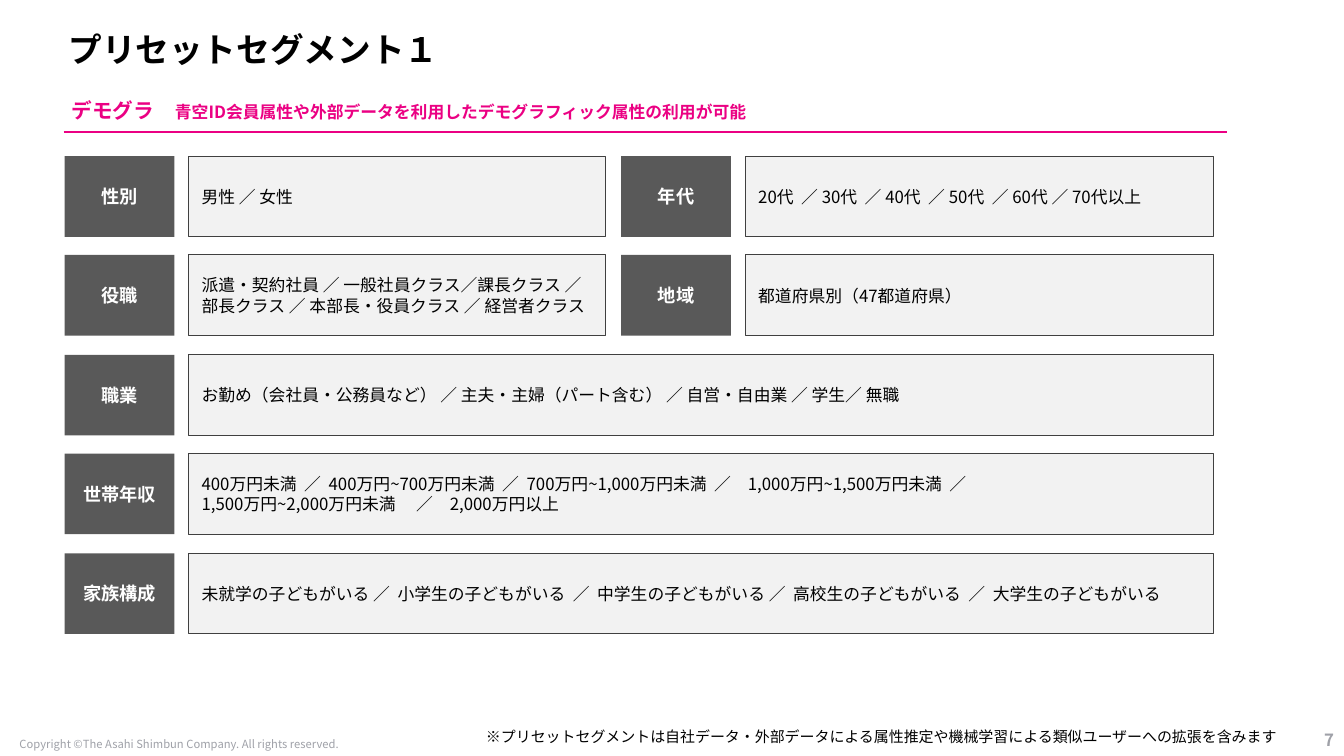
from lxml import etree
from pptx import Presentation
from pptx.dml.color import RGBColor
from pptx.enum.shapes import MSO_CONNECTOR, MSO_SHAPE
from pptx.enum.text import MSO_ANCHOR, MSO_AUTO_SIZE, PP_ALIGN
from pptx.oxml.ns import qn
from pptx.util import Pt

PX = 9144  # 100 px to the inch
FONT = "Noto Sans CJK JP"
PINK, DARK, PALE, EDGE = "EB0083", "595959", "F2F2F2", "404040"
BLACK, WHITE, GREY = "000000", "FFFFFF", "9FA1A8"
RECT, LINE = MSO_SHAPE.RECTANGLE, MSO_CONNECTOR.STRAIGHT
LEFT, CENTER, RIGHT = PP_ALIGN.LEFT, PP_ALIGN.CENTER, PP_ALIGN.RIGHT
TOP, MIDDLE = MSO_ANCHOR.TOP, MSO_ANCHOR.MIDDLE


def rgb(value):
    return RGBColor.from_string(value)


def write(sp, paragraphs, color, align=LEFT, anchor=MIDDLE, inset=13):
    """Fill a shape with paragraphs, each a list of (text, size, bold) runs."""
    tf = sp.text_frame
    tf.word_wrap = True
    tf.auto_size = MSO_AUTO_SIZE.NONE
    tf.vertical_anchor = anchor
    tf.margin_left = tf.margin_right = inset * PX
    tf.margin_top = tf.margin_bottom = inset * PX
    for i, runs in enumerate(paragraphs):
        p = tf.add_paragraph() if i else tf.paragraphs[0]
        p.alignment = align
        for text, size, bold in runs:
            r = p.add_run()
            r.text = text
            r.font.size = Pt(size)
            r.font.bold = bold
            r.font.color.rgb = rgb(color)
            r.font.name = FONT
            etree.SubElement(r.font._element, qn("a:ea"), typeface=FONT)


prs = Presentation()
prs.slide_width, prs.slide_height = 1333 * PX, 750 * PX
s = prs.slides.add_slide(prs.slide_layouts[5])

# Title
title = s.shapes.title
title.left, title.top, title.width, title.height = 58 * PX, 28 * PX, 996 * PX, 47 * PX
write(title, [[("プリセットセグメント１", 24, True)]], BLACK, inset=10)
title.text_frame.paragraphs[0].line_spacing = 0.9

# Section heading, footnote, copyright line and page number
texts = [
    (58, 84, 812, 78, [("デモグラ　", 14.7, True),
                       ("青空ID会員属性や外部データを利用したデモグラフィック属性の利用が可能", 12, True)],
     PINK, LEFT, TOP, 13),
    (464, 704, 846, 44,
     [("※プリセットセグメントは自社データ・外部データによる属性推定や機械学習による類似ユーザーへの拡張を含みます",
       10.7, False)], BLACK, LEFT, TOP, 18),
    (9, 730, 338, 17, [("Copyright ©The Asahi Shimbun Company. All rights reserved.", 8, False)],
     GREY, CENTER, MIDDLE, 0),
    (1255, 717, 78, 33, [("7", 12, True)], GREY, RIGHT, MIDDLE, 10),
]
for x, y, w, h, runs, color, align, anchor, inset in texts:
    sp = s.shapes.add_textbox(x * PX, y * PX, w * PX, h * PX)
    write(sp, [runs], color, align, anchor, inset)

# Rule under the heading
rule = s.shapes.add_connector(LINE, 63 * PX, 131 * PX, 1217 * PX, 131 * PX)
rule.line.color.rgb = rgb(PINK)
rule.line.width = Pt(1.5)
etree.SubElement(rule._element.spPr, qn("a:effectLst"))

# Segments: row, label left, value width, label, value lines
LABEL_W, BOX_H, VALUE_OFFSET = 109, 80, 123
segments = [
    (0, 64, 414, "性別", ["男性 ／ 女性"]),
    (0, 616, 465, "年代", ["20代  ／ 30代  ／ 40代  ／ 50代  ／ 60代 ／ 70代以上"]),
    (1, 64, 414, "役職",
     ["派遣・契約社員 ／ 一般社員クラス／課長クラス ／  部長クラス ／ 本部長・役員クラス ／ 経営者クラス"]),
    (1, 616, 465, "地域", ["都道府県別（47都道府県）"]),
    (2, 64, 1017, "職業",
     ["お勤め（会社員・公務員など） ／ 主夫・主婦（パート含む） ／ 自営・自由業 ／ 学生／ 無職"]),
    (3, 64, 1017, "世帯年収",
     ["400万円未満  ／  400万円~700万円未満  ／  700万円~1,000万円未満  ／　1,000万円~1,500万円未満  ／",
      "1,500万円~2,000万円未満 　／　2,000万円以上"]),
    (4, 64, 1017, "家族構成",
     ["未就学の子どもがいる ／  小学生の子どもがいる  ／  中学生の子どもがいる ／  高校生の子どもがいる  ／  大学生の子どもがいる"]),
]
for row, x, value_w, label, lines in segments:
    y = 155 + row * 197 // 2
    boxes = [
        (x, LABEL_W, DARK, WHITE, CENTER, [[(label, 13, True)]]),
        (x + VALUE_OFFSET, value_w, PALE, BLACK, LEFT, [[(t, 12, False)] for t in lines]),
    ]
    for left, width, fill, color, align, paragraphs in boxes:
        sp = s.shapes.add_shape(RECT, left * PX, y * PX, width * PX, BOX_H * PX)
        sp.shadow.inherit = False
        sp.fill.solid()
        sp.fill.fore_color.rgb = rgb(fill)
        if fill == PALE:
            sp.line.color.rgb = rgb(EDGE)
            sp.line.width = Pt(0.75)
        else:
            sp.line.fill.background()
        write(sp, paragraphs, color, align)

prs.save("out.pptx")
